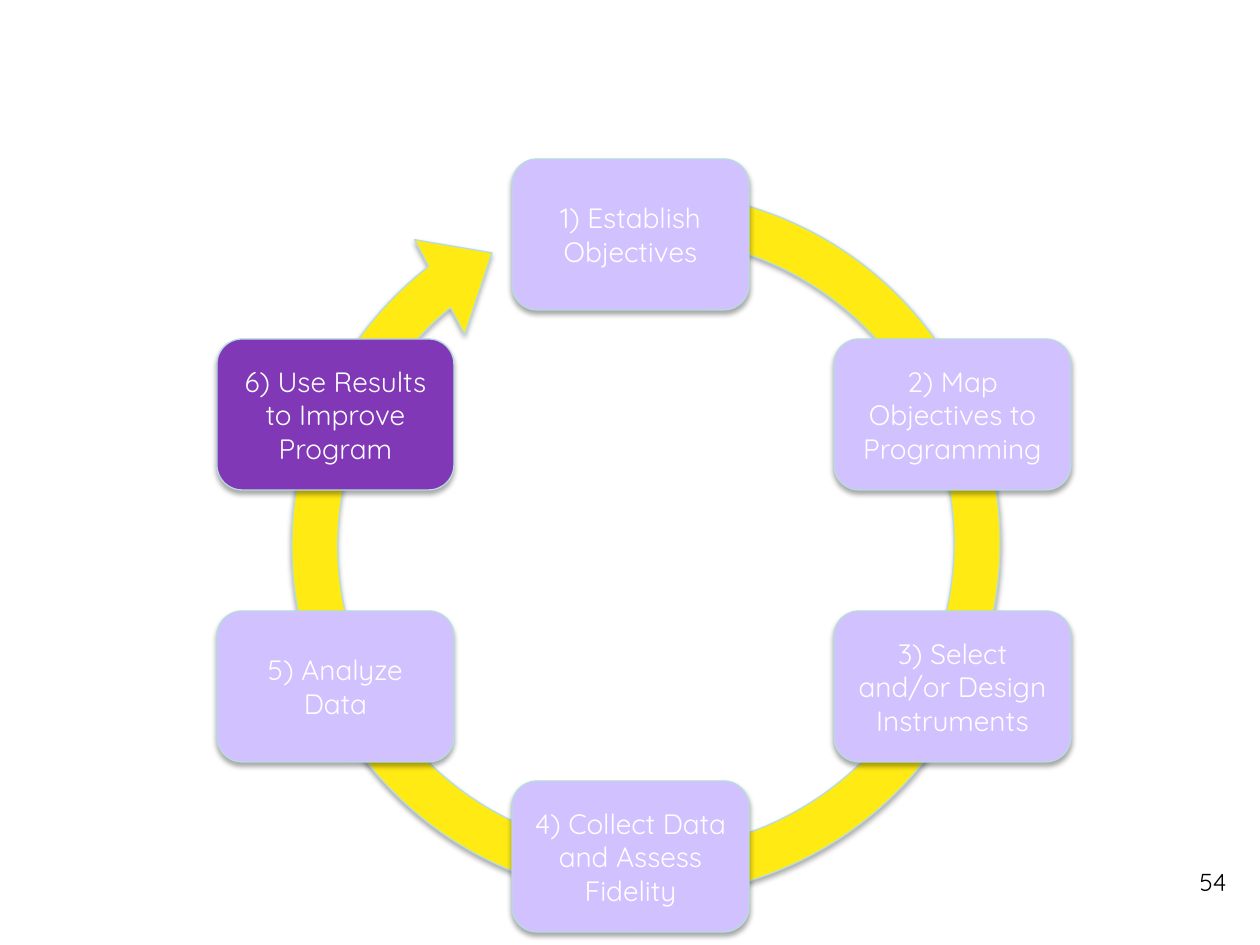
from lxml import etree
from pptx import Presentation
from pptx import util as u
from pptx.dml.color import RGBColor
from pptx.enum import shapes, text
from pptx.oxml.ns import qn

PX = u.Inches(1) / 126
FONT = "Quicksand"
COLOURS = {
    "step": "D2C1FF",
    "current": "8038B6",
    "arrow": "FFEA14",
    "outline": "B6DCDF",
    "light": "FFFFFF",
    "dark": "000000",
}
STEP_SIZE = (237, 151)
LEFT, CENTRE, RIGHT = 217, 512, 834
TOP, UPPER, LOWER, BOTTOM = 159, 339, 611, 781
STEPS = [
    ("1) Establish Objectives", CENTRE, TOP, "step"),
    ("2) Map Objectives to Programming", RIGHT, UPPER, "step"),
    ("3) Select and/or Design Instruments", RIGHT, LOWER, "step"),
    ("4) Collect Data and Assess Fidelity", CENTRE, BOTTOM, "step"),
    ("6) Use Results to Improve Program", LEFT, UPPER, "current"),
    ("5) Analyze Data", LEFT, LOWER, "step"),
]


def emu(*lengths):
    return [round(length * PX) for length in lengths]


def colour(name):
    return RGBColor.from_string(COLOURS[name])


def add_shadow(shape):
    """Give the shape a soft shadow straight below it."""
    shape.shadow.inherit = False
    effects = shape._element.spPr.find(qn("a:effectLst"))
    shadow = etree.SubElement(
        effects, qn("a:outerShdw"), blurRad=str(u.Pt(3.1)),
        dist=str(u.Pt(1.8)), dir="5400000", rotWithShape="0")
    tint = etree.SubElement(shadow, qn("a:srgbClr"), val=COLOURS["dark"])
    etree.SubElement(tint, qn("a:alpha"), val="35000")


def add_shape(page, kind, place, fill):
    shape = page.shapes.add_shape(kind, *emu(*place))
    shape.fill.solid()
    shape.fill.fore_color.rgb = colour(fill)
    shape.line.color.rgb = colour("outline")
    shape.line.width = u.Pt(0.75)
    add_shadow(shape)
    return shape


def write(box, words, size, ink, align):
    box.text_frame.word_wrap = True
    para = box.text_frame.paragraphs[0]
    para.text = words
    para.alignment = align
    for span in para.runs:
        span.font.name = FONT
        span.font.size = u.Pt(size)
        span.font.color.rgb = colour(ink)


def add_cycle_arrow(page):
    arrow = add_shape(page, shapes.MSO_SHAPE.CIRCULAR_ARROW,
                      (263, 159, 766, 770), "arrow")
    arrow.rotation = 250.3
    for index, value in enumerate((0.06, 6.54, 204.56, 3.22, 0.07)):
        arrow.adjustments[index] = value


def add_step(page, words, left, top, fill):
    box = add_shape(page, shapes.MSO_SHAPE.ROUNDED_RECTANGLE,
                    (left, top, *STEP_SIZE), fill)
    box.text_frame.vertical_anchor = text.MSO_ANCHOR.MIDDLE
    write(box, words, 16, "light", text.PP_ALIGN.CENTER)


def add_page_number(page, number):
    box = page.shapes.add_textbox(*emu(945, 861, 294, 66))
    write(box, number, 14, "dark", text.PP_ALIGN.RIGHT)


def main():
    deck = Presentation()
    deck.slide_width, deck.slide_height = u.Inches(10), u.Inches(7.5)
    page = deck.slides.add_slide(deck.slide_layouts[6])

    add_page_number(page, "54")
    # The ring lies behind the six steps
    add_cycle_arrow(page)
    for step in STEPS:
        add_step(page, *step)

    deck.save("out.pptx")


if __name__ == "__main__":
    main()
